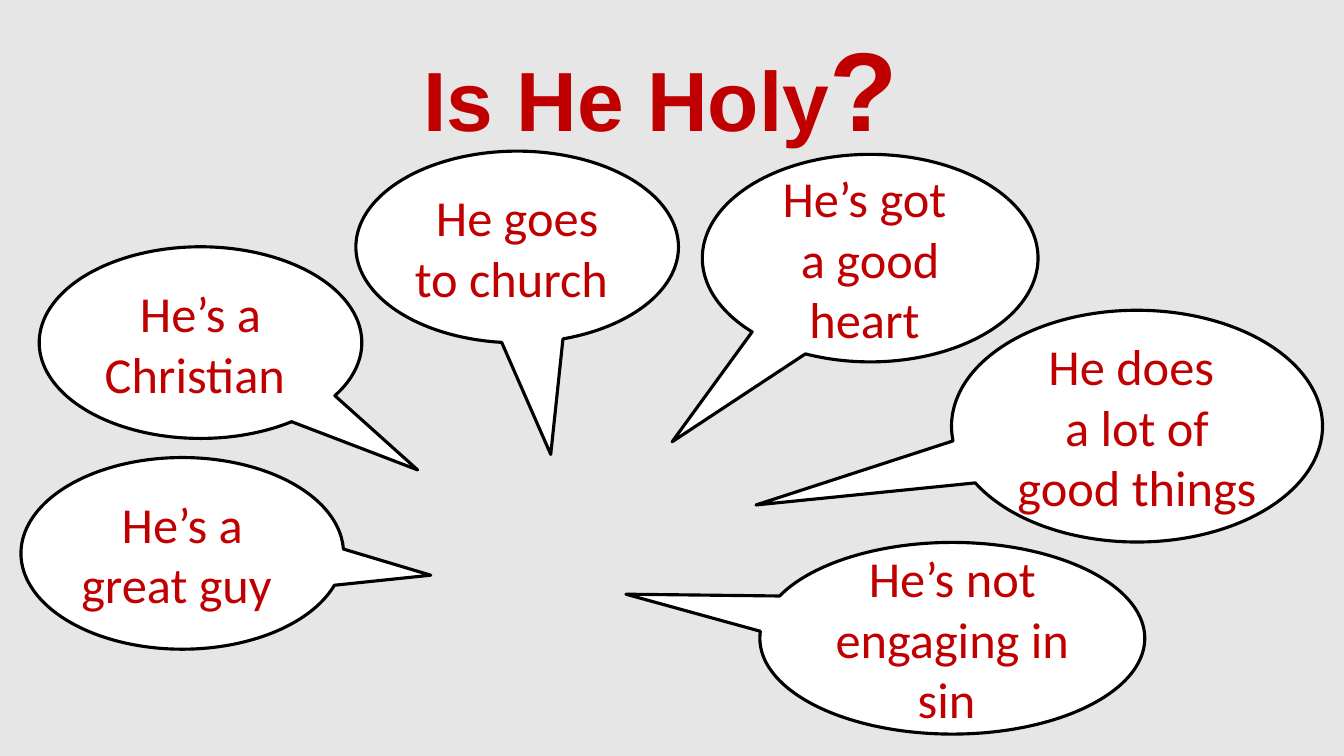
from pptx import Presentation
from pptx.dml.color import RGBColor
from pptx.enum.shapes import MSO_SHAPE
from pptx.enum.text import MSO_ANCHOR, MSO_AUTO_SIZE, PP_ALIGN
from pptx.util import Cm, Pt

RED = RGBColor(0xC0, 0x00, 0x00)
WHITE = RGBColor(0xFF, 0xFF, 0xFF)
BLACK = RGBColor(0x00, 0x00, 0x00)
GREY = RGBColor(0xE7, 0xE6, 0xE6)

TITLE = [("Is He Holy", 60), ("?", 80), (" ", 60)]
TITLE_BOX = (2.34, 0.56, 29.21, 3.68)
TITLE_FONT = {"name": "Arial", "bold": True}
BUBBLE_FONT = {"name": "Calibri", "size": Pt(36)}

BUBBLES = [
    (["He’s a Christian "], (0.99, 6.22, 8.13, 4.83), (0.673, 0.664)),
    (["He goes to church "], (8.97, 3.81, 8.13, 4.83), (0.104, 1.082)),
    (["He’s got ", "a good heart "], (17.7, 3.89, 8.46, 5.23), (-0.59, 0.885)),
    (["He’s a great guy "], (0.53, 11.53, 8.13, 4.83), (0.77, 0.114)),
    (["He does ", "a lot of good things "], (23.98, 7.82, 9.35, 5.84), (-1.027, 0.34)),
    (["He’s not engaging in sin "], (19.15, 13.67, 9.7, 4.83), (-0.848, -0.23)),
]


def add_run(p, text, font):
    r = p.add_run()
    r.text = text
    for key, value in font.items():
        setattr(r.font, key, value)
    r.font.color.rgb = RED


def add_title(s):
    sp = s.shapes.title
    sp.left, sp.top, sp.width, sp.height = map(Cm, TITLE_BOX)
    tf = sp.text_frame
    tf.auto_size = MSO_AUTO_SIZE.NONE
    tf.vertical_anchor = MSO_ANCHOR.MIDDLE
    p = tf.paragraphs[0]
    p.alignment = PP_ALIGN.CENTER
    p.line_spacing = 0.9
    for text, size in TITLE:
        add_run(p, text, {**TITLE_FONT, "size": Pt(size)})


def add_bubble(s, lines, box, tip):
    sp = s.shapes.add_shape(MSO_SHAPE.OVAL_CALLOUT, *map(Cm, box))
    for i, offset in enumerate(tip):
        sp.adjustments[i] = offset
    sp.shadow.inherit = False
    sp.fill.solid()
    sp.fill.fore_color.rgb = WHITE
    sp.line.color.rgb = BLACK
    sp.line.width = Pt(2.25)
    tf = sp.text_frame
    tf.word_wrap = True
    tf.vertical_anchor = MSO_ANCHOR.MIDDLE
    for i, line in enumerate(lines):
        p = tf.add_paragraph() if i else tf.paragraphs[0]
        p.alignment = PP_ALIGN.CENTER
        add_run(p, line, BUBBLE_FONT)


def main():
    """Build the slide of speech bubbles around the title question."""
    prs = Presentation()
    prs.slide_width, prs.slide_height = Cm(33.87), Cm(19.05)
    s = prs.slides.add_slide(prs.slide_layouts[5])
    s.background.fill.solid()
    s.background.fill.fore_color.rgb = GREY
    add_title(s)
    for lines, box, tip in BUBBLES:
        add_bubble(s, lines, box, tip)
    prs.save("out.pptx")


if __name__ == "__main__":
    main()
